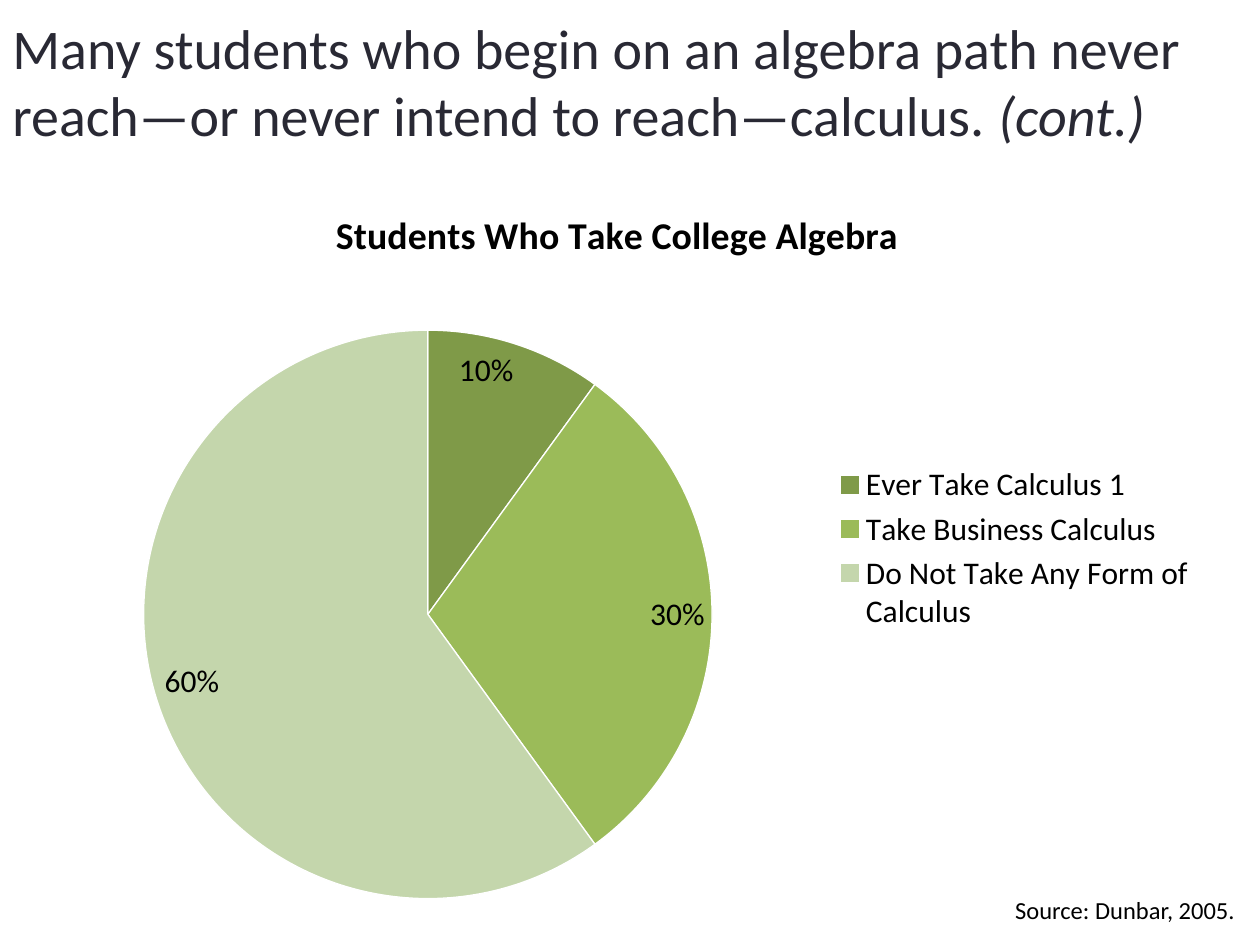
from lxml import etree
from pptx import Presentation
from pptx.chart.data import CategoryChartData
from pptx.dml.color import RGBColor
from pptx.enum.chart import XL_CHART_TYPE as CT, XL_LABEL_POSITION as LP, XL_LEGEND_POSITION as LG
from pptx.enum.text import MSO_ANCHOR as ANCHOR, PP_ALIGN as ALIGN
from pptx.oxml.ns import qn
from pptx.util import Inches, Pt

INK = RGBColor(0x29, 0x29, 0x34)
BLACK = RGBColor(0x00, 0x00, 0x00)
WHITE = RGBColor(0xFF, 0xFF, 0xFF)
DARK_GREEN = RGBColor(0x7F, 0x9A, 0x48)
GREEN = RGBColor(0x9B, 0xBB, 0x59)
PALE_GREEN = RGBColor(0xC4, 0xD6, 0xAC)


class Deck:
    font = "Calibri"

    def __init__(self, width, height):
        self.prs = Presentation()
        self.prs.slide_width, self.prs.slide_height = Inches(width), Inches(height)
        self.slide = self.prs.slides.add_slide(self.prs.slide_layouts[6])

    def box(self, x, y, w, h):
        sw, sh = self.prs.slide_width, self.prs.slide_height
        return int(x * sw), int(y * sh), int(w * sw), int(h * sh)

    def style(self, font, size, color, bold=None):
        font.name, font.size, font.bold = self.font, Pt(size), bold
        font.color.rgb = color

    def text(self, area, runs, size, color, align=ALIGN.LEFT, anchor=ANCHOR.TOP):
        tf = self.slide.shapes.add_textbox(*self.box(*area)).text_frame
        tf.word_wrap, tf.vertical_anchor = True, anchor
        p = tf.paragraphs[0]
        p.alignment = align
        self.style(p.font, size, color)
        for words, italic in runs:
            r = p.add_run()
            r.text = words
            if italic:
                r.font.italic = True

    def place(self, parent, index, area, inner=False):
        for old in parent.findall(qn("c:layout")):
            parent.remove(old)
        layout = etree.Element(qn("c:layout"))
        manual = etree.SubElement(layout, qn("c:manualLayout"))
        settings = [("layoutTarget", "inner")] if inner else []
        settings += [("xMode", "edge"), ("yMode", "edge"), *zip("xywh", area)]
        for tag, value in settings:
            etree.SubElement(manual, qn(f"c:{tag}")).set("val", str(value))
        parent.insert(index, layout)

    def pie(self, area, title, slices, size, plot_area, legend_area):
        data = CategoryChartData()
        data.categories = [name for name, _, _ in slices]
        data.add_series(title, [value for _, value, _ in slices])
        chart = self.slide.shapes.add_chart(CT.PIE, *self.box(*area), data).chart
        self.style(chart.font, size, BLACK)
        chart.has_title = True
        p = chart.chart_title.text_frame.paragraphs[0]
        p.text = title
        self.style(p.font, size * 1.2, BLACK, True)
        plot = chart.plots[0]
        plot.vary_by_categories = True
        for i, (_, _, color) in enumerate(slices):
            fmt = plot.series[0].points[i].format
            fmt.fill.solid()
            fmt.fill.fore_color.rgb = color
            fmt.line.color.rgb = WHITE
            fmt.line.width = Pt(0.75)
        plot.has_data_labels = True
        labels = plot.data_labels
        labels.show_percentage, labels.show_value = True, False
        labels.number_format, labels.number_format_is_linked = "0%", False
        labels.position = LP.INSIDE_END
        self.style(labels.font, size, BLACK)
        chart.has_legend = True
        legend = chart.legend
        legend.position, legend.include_in_layout = LG.RIGHT, False
        self.style(legend.font, size, BLACK)
        chart_space = plot.series[0].format.fill and chart.element
        self.place(chart_space.find(".//" + qn("c:plotArea")), 0, plot_area, inner=True)
        self.place(chart_space.find(".//" + qn("c:legend")), 1, legend_area)


def main():
    deck = Deck(10, 7.5)
    deck.pie(
        (0.02, 0.19, 0.94, 0.78),
        "Students Who Take College Algebra",
        [
            ("Ever Take Calculus 1", 10, DARK_GREEN),
            ("Take Business Calculus", 30, GREEN),
            ("Do Not Take Any Form of Calculus", 60, PALE_GREEN),
        ],
        18,
        (0.1, 0.2, 0.48, 0.78),
        (0.68, 0.38, 0.31, 0.24),
    )
    deck.text(
        (0, 0, 1, 0.17),
        [
            ("Many students who begin on an algebra path never reach—or never intend to reach—calculus. ", False),
            ("(cont.)", True),
        ],
        32, INK, anchor=ANCHOR.MIDDLE,
    )
    deck.text((0.48, 0.94, 0.51, 0.05), [("Source: Dunbar, 2005.", False)], 14, BLACK, ALIGN.RIGHT)
    deck.prs.save("out.pptx")


if __name__ == "__main__":
    main()
